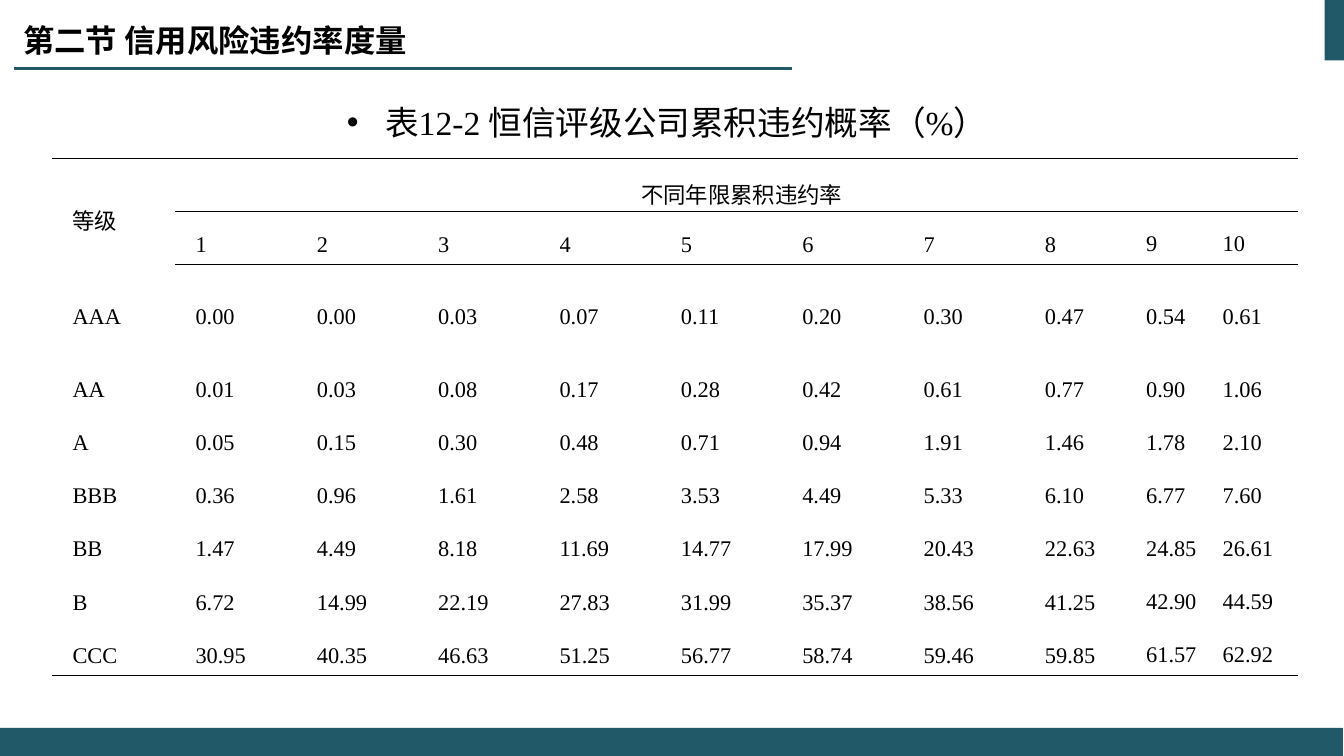
from lxml import etree
from pptx import Presentation
from pptx import util as u
from pptx.dml.color import RGBColor
from pptx.enum import shapes, text
from pptx.oxml import ns

COLORS = {"teal": "215968", "ink": "000000", "paper": "FFFFFF"}
CJK, LATIN = "Noto Sans CJK SC", "Times New Roman"

YEARS = [str(year) for year in range(1, 11)]
DEFAULT_RATES = {
    "AAA": "0.00 0.00 0.03 0.07 0.11 0.20 0.30 0.47 0.54 0.61",
    "AA": "0.01 0.03 0.08 0.17 0.28 0.42 0.61 0.77 0.90 1.06",
    "A": "0.05 0.15 0.30 0.48 0.71 0.94 1.91 1.46 1.78 2.10",
    "BBB": "0.36 0.96 1.61 2.58 3.53 4.49 5.33 6.10 6.77 7.60",
    "BB": "1.47 4.49 8.18 11.69 14.77 17.99 20.43 22.63 24.85 26.61",
    "B": "6.72 14.99 22.19 27.83 31.99 35.37 38.56 41.25 42.90 44.59",
    "CCC": "30.95 40.35 46.63 51.25 56.77 58.74 59.46 59.85 61.57 62.92",
}


class SlideBuilder:
    """Places elements on a slide; lengths are percent of its width or height."""

    def __init__(self, deck):
        self.deck = deck
        self.slide = deck.slides.add_slide(deck.slide_layouts[6])

    def x(self, share):
        return int(self.deck.slide_width * share / 100)

    def y(self, share):
        return int(self.deck.slide_height * share / 100)

    def area(self, left, top, width, height):
        return self.x(left), self.y(top), self.x(width), self.y(height)

    def color(self, name):
        return RGBColor.from_string(COLORS[name])

    def band(self, *area):
        band = self.slide.shapes.add_shape(shapes.MSO_SHAPE.RECTANGLE, *self.area(*area))
        band.shadow.inherit = False
        band.fill.solid()
        band.fill.fore_color.rgb = self.color("teal")
        band.line.fill.background()

    def rule(self, start, end, top):
        rule = self.slide.shapes.add_connector(
            shapes.MSO_CONNECTOR.STRAIGHT, self.x(start), self.y(top), self.x(end), self.y(top))
        rule.line.color.rgb = self.color("teal")
        rule.line.width = u.Pt(1.5)
        etree.SubElement(rule._element.spPr, ns.qn("a:effectLst"))

    def add_words(self, paragraph, words, size, font=LATIN, bold=False):
        run = paragraph.add_run()
        run.text = words
        run.font.size, run.font.bold = u.Pt(size), bold
        run.font.name = font
        run.font.color.rgb = self.color("ink")
        east_asian = etree.Element(ns.qn("a:ea"), typeface=CJK)
        run._r.rPr.find(ns.qn("a:latin")).addnext(east_asian)

    def text_box(self, area, anchor):
        frame = self.slide.shapes.add_textbox(*self.area(*area)).text_frame
        frame.word_wrap = True
        frame.vertical_anchor = anchor
        return frame.paragraphs[0]

    def title(self, words, *area):
        self.add_words(self.text_box(area, text.MSO_ANCHOR.MIDDLE), words, 22.4, CJK, True)

    def caption(self, words, *area):
        caption = self.text_box(area, text.MSO_ANCHOR.TOP)
        caption.alignment = text.PP_ALIGN.CENTER
        caption.line_spacing = 1.7
        props = caption._p.get_or_add_pPr()
        props.set("marL", str(u.Inches(0.38)))
        props.set("indent", str(-u.Inches(0.38)))
        etree.SubElement(props, ns.qn("a:buFont"), typeface="Arial")
        etree.SubElement(props, ns.qn("a:buChar"), char="•")
        self.add_words(caption, words, 24)

    def borders(self, cell, ruled):
        props = cell._tc.get_or_add_tcPr()
        for place, side in enumerate(("L", "R", "T", "B")):
            line = etree.Element(ns.qn(f"a:ln{side}"), w=str(u.Pt(1)))
            if side in ruled:
                fill = etree.SubElement(line, ns.qn("a:solidFill"))
                etree.SubElement(fill, ns.qn("a:srgbClr"), val=COLORS["ink"])
            else:
                etree.SubElement(line, ns.qn("a:noFill"))
            props.insert(place, line)

    def fill_cell(self, cell, words, narrow, font=LATIN, centred=False):
        cell.vertical_anchor = text.MSO_ANCHOR.MIDDLE
        inset = 0 if narrow else u.Inches(0.1)
        cell.margin_left = cell.margin_right = inset
        cell.margin_top = 0 if narrow else u.Inches(0.01)
        cell.margin_bottom = 0
        cell.fill.solid()
        cell.fill.fore_color.rgb = self.color("paper")
        paragraph = cell.text_frame.paragraphs[0]
        paragraph.line_spacing = 1.5
        paragraph._p.get_or_add_pPr().set("marL", str(int(inset)))
        if centred:
            paragraph.alignment = text.PP_ALIGN.CENTER
        if words:
            self.add_words(paragraph, words, 16, font)

    def rate_table(self, rows, left, top, widths, heights):
        table = self.slide.shapes.add_table(
            len(rows), len(widths), *self.area(left, top, sum(widths), sum(heights))).table
        table.first_row = table.horz_banding = False
        for column, width in zip(table.columns, widths):
            column.width = self.x(width)
        for row, height in zip(table.rows, heights):
            row.height = self.y(height)
        last = len(rows) - 1
        for r, row in enumerate(rows):
            for c, words in enumerate(row):
                cell = table.cell(r, c)
                heading = r == 0
                self.fill_cell(cell, words, c > 8 and not heading,
                               CJK if heading else LATIN, heading and c > 0)
                above = r == 0 or (c > 0 and r in (1, 2))
                below = r == last or (c > 0 and r in (0, 1))
                self.borders(cell, "T" * above + "B" * below)
        table.cell(0, 0).merge(table.cell(1, 0))
        table.cell(0, 1).merge(table.cell(0, len(widths) - 1))


def main():
    deck = Presentation()
    deck.slide_width, deck.slide_height = u.Inches(13.33), u.Inches(7.5)
    page = SlideBuilder(deck)

    # Frame: corner mark, title rule and footer
    page.band(98.57, 0, 1.5, 8)
    page.rule(58.96, 1.05, 9.07)
    page.band(0, 96.27, 99.92, 3.73)

    # Headings
    page.title("第二节 信用风险违约率度量", 0.98, -0.4, 62.34, 11.33)
    page.caption("表12-2 恒信评级公司累积违约概率（%）", 0.83, 9.07, 97.6, 10.53)

    # Cumulative default rates by grade and year
    rows = [["等级", "不同年限累积违约率"] + [""] * 9, [""] + YEARS]
    rows += [[grade] + rates.split() for grade, rates in DEFAULT_RATES.items()]
    page.rate_table(rows, 3.9, 20.93,
                    widths=[9.15] + [9.03] * 8 + [5.7, 5.63],
                    heights=[7.03] * 2 + [12.2] + [7.03] * 6)

    deck.save("out.pptx")


if __name__ == "__main__":
    main()
